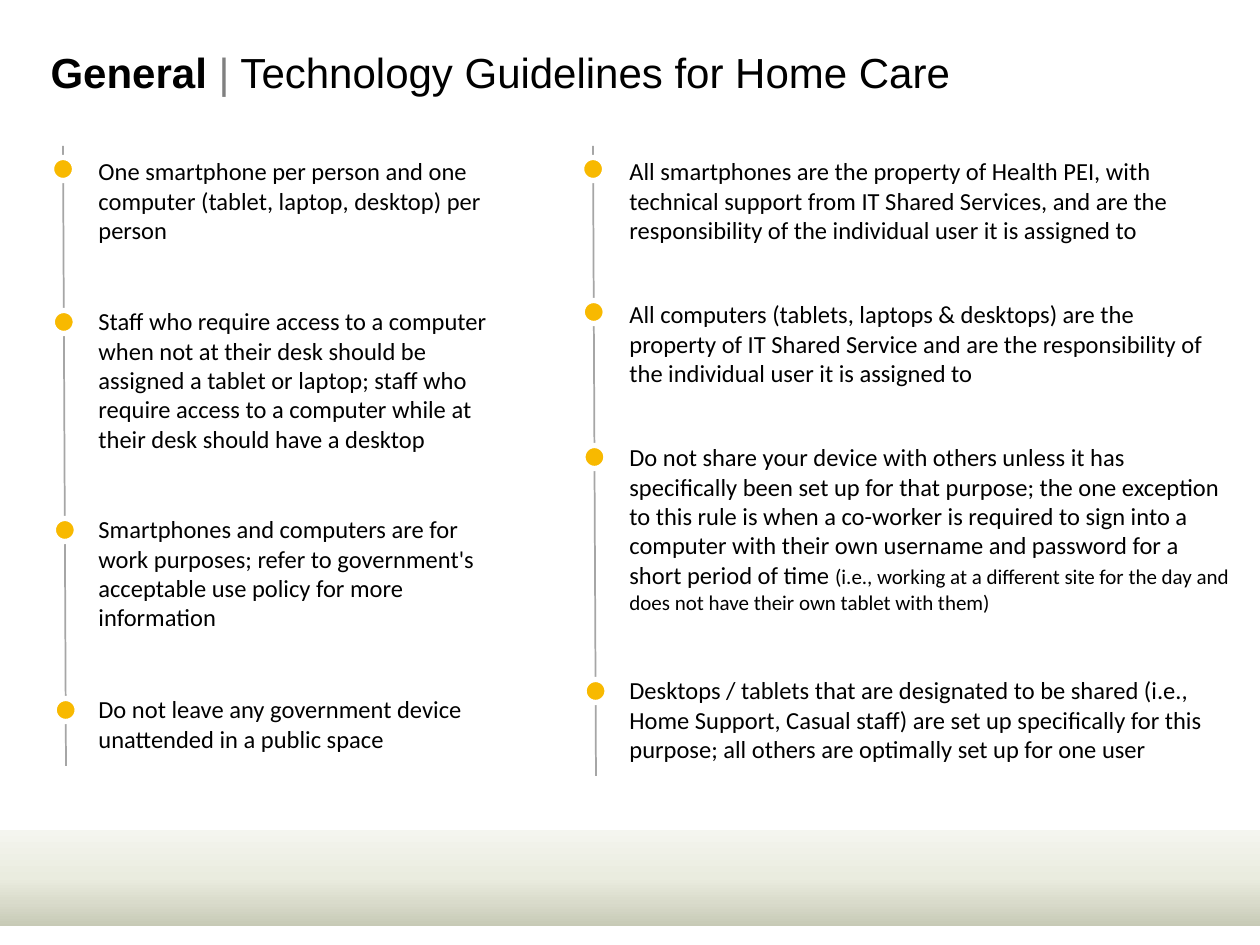
from copy import deepcopy

from pptx import Presentation
from pptx.dml.color import RGBColor
from pptx.enum.shapes import MSO_CONNECTOR as Connector, MSO_SHAPE as Shape
from pptx.enum.text import MSO_ANCHOR as Anchor, MSO_AUTO_SIZE as AutoSize, PP_ALIGN as Align
from pptx.oxml.ns import qn
from pptx.util import Pt
from lxml import etree

EMU_PER_PX = 914400 / 126


def px(length):
    return round(length * EMU_PER_PX)


def color(hex_string):
    return RGBColor.from_string(hex_string)


class GuidelineSlide:
    TITLE_FONT, BODY_FONT = "Arial", "Calibri"
    BLACK, GRAY, RAIL, DOT, WHITE = "000000", "808080", "A6A6A6", "F8B900", "FFFFFF"
    DOT_SIZE = 23

    def __init__(self, deck):
        self.slide = deck.slides.add_slide(deck.slide_layouts[5])
        self.shapes = self.slide.shapes

    def style_run(self, run, size, font, hex_string=BLACK, bold=False):
        run.font.size = Pt(size)
        run.font.name = font
        run.font.bold = bold
        run.font.color.rgb = color(hex_string)

    def band(self, left, top, width, height, stops):
        band = self.shapes.add_shape(Shape.RECTANGLE, px(left), px(top), px(width), px(height))
        band.shadow.inherit = False
        band.line.fill.background()
        band.rotation = 180
        band.fill.gradient()
        band.fill.gradient_angle = 270
        stop_list = band._element.spPr.find(qn("a:gradFill")).find(qn("a:gsLst"))
        while len(stop_list) < len(stops):
            stop_list.append(deepcopy(stop_list[0]))
        for stop, (position, hex_string) in zip(band.fill.gradient_stops, stops):
            stop.position = position
            stop.color.rgb = color(hex_string)

    def title(self, left, top, width, height, parts):
        box = self.shapes.title
        box.left, box.top, box.width, box.height = map(px, (left, top, width, height))
        frame = box.text_frame
        frame.vertical_anchor = Anchor.MIDDLE
        frame.auto_size = AutoSize.NONE
        para = frame.paragraphs[0]
        para.alignment = Align.LEFT
        for text, hex_string, bold in parts:
            run = para.add_run()
            run.text = text
            self.style_run(run, 24, self.TITLE_FONT, hex_string, bold)

    def text(self, left, top, width, height, parts):
        box = self.shapes.add_textbox(px(left), px(top), px(width), px(height))
        frame = box.text_frame
        frame.word_wrap = True
        frame.auto_size = AutoSize.SHAPE_TO_FIT_TEXT
        para = frame.paragraphs[0]
        para.space_after = Pt(6)
        for text, size in parts:
            run = para.add_run()
            run.text = text
            self.style_run(run, size, self.BODY_FONT)

    def rail(self, start, end):
        line = self.shapes.add_connector(Connector.STRAIGHT, *map(px, start + end))
        line.line.color.rgb = color(self.RAIL)
        line.line.width = Pt(1)
        etree.SubElement(line._element.spPr, qn("a:effectLst"))

    def dot(self, center_x, center_y):
        half = self.DOT_SIZE / 2
        dot = self.shapes.add_shape(Shape.OVAL, px(center_x - half), px(center_y - half),
                                    px(self.DOT_SIZE), px(self.DOT_SIZE))
        dot.shadow.inherit = False
        dot.fill.solid()
        dot.fill.fore_color.rgb = color(self.DOT)
        dot.line.color.rgb = color(self.WHITE)
        dot.line.width = Pt(3)

    def timeline(self, start, end, text_left, items):
        """A slightly slanted rail with one dot and one text per item."""
        self.rail(start, end)
        for top, dot_y, width, height, parts in items:
            self.text(text_left, top, width, height, parts)
            share = (dot_y - start[1]) / (end[1] - start[1])
            self.dot(start[0] + share * (end[0] - start[0]), dot_y)


# Guidelines: text top, dot centre, width, height, (text, size) parts
LEFT_ITEMS = [
    (150, 169, 422, 102, [("One smartphone per person and one computer (tablet, laptop, desktop) "
                           "per person", 14)]),
    (300, 322, 422, 161, [("Staff who require access to a computer when not at their desk should be "
                           "assigned a tablet or laptop; staff who require access to a computer "
                           "while at their desk should have a desktop", 14)]),
    (508, 530, 422, 131, [("Smartphones and computers are for work purposes; refer to government's "
                           "acceptable use policy for more information", 14)]),
    (688, 710, 422, 72, [("Do not leave any government device unattended in a public space", 14)]),
]
RIGHT_ITEMS = [
    (150, 169, 610, 102, [("All smartphones are the property of Health PEI, with technical support "
                           "from IT Shared Services, and are the responsibility of the individual "
                           "user it is assigned to", 14)]),
    (293, 312, 610, 102, [("All computers (tablets, laptops & desktops) are the property of IT "
                           "Shared Service and are the responsibility of the individual user it "
                           "is assigned to", 14)]),
    (436, 457, 626, 183, [("Do not share your device with others unless it has specifically been "
                           "set up for that purpose; the one exception to this rule is when a "
                           "co-worker is required to sign into a computer with their own username "
                           "and password for a short period of time ", 14),
                          ("(i.e., working at a different site for the day and does not have "
                           "their own tablet with them)", 12)]),
    (669, 691, 626, 102, [("Desktops / tablets that are designated to be shared (i.e., Home Support, "
                           "Casual staff) are set up specifically for this purpose; all others are "
                           "optimally set up for one user", 14)]),
]


def main():
    deck = Presentation()
    deck.slide_width, deck.slide_height = px(1260), px(945)
    page = GuidelineSlide(deck)

    # Footer band
    page.band(0, 830, 1260, 96,
              [(0, "C7CAB6"), (0.25, "D9DBCB"), (0.5, "EAECDF"), (1, "F4F5EF")])

    # Title
    page.title(38, 38, 1189, 68, [("General ", page.BLACK, True), ("|", page.GRAY, False),
                                  (" Technology Guidelines for Home Care", page.BLACK, False)])

    # Two columns of guidelines
    page.timeline((63, 146), (66, 766), 86, LEFT_ITEMS)
    page.timeline((593, 146), (596, 776), 617, RIGHT_ITEMS)

    deck.save("out.pptx")


if __name__ == "__main__":
    main()
